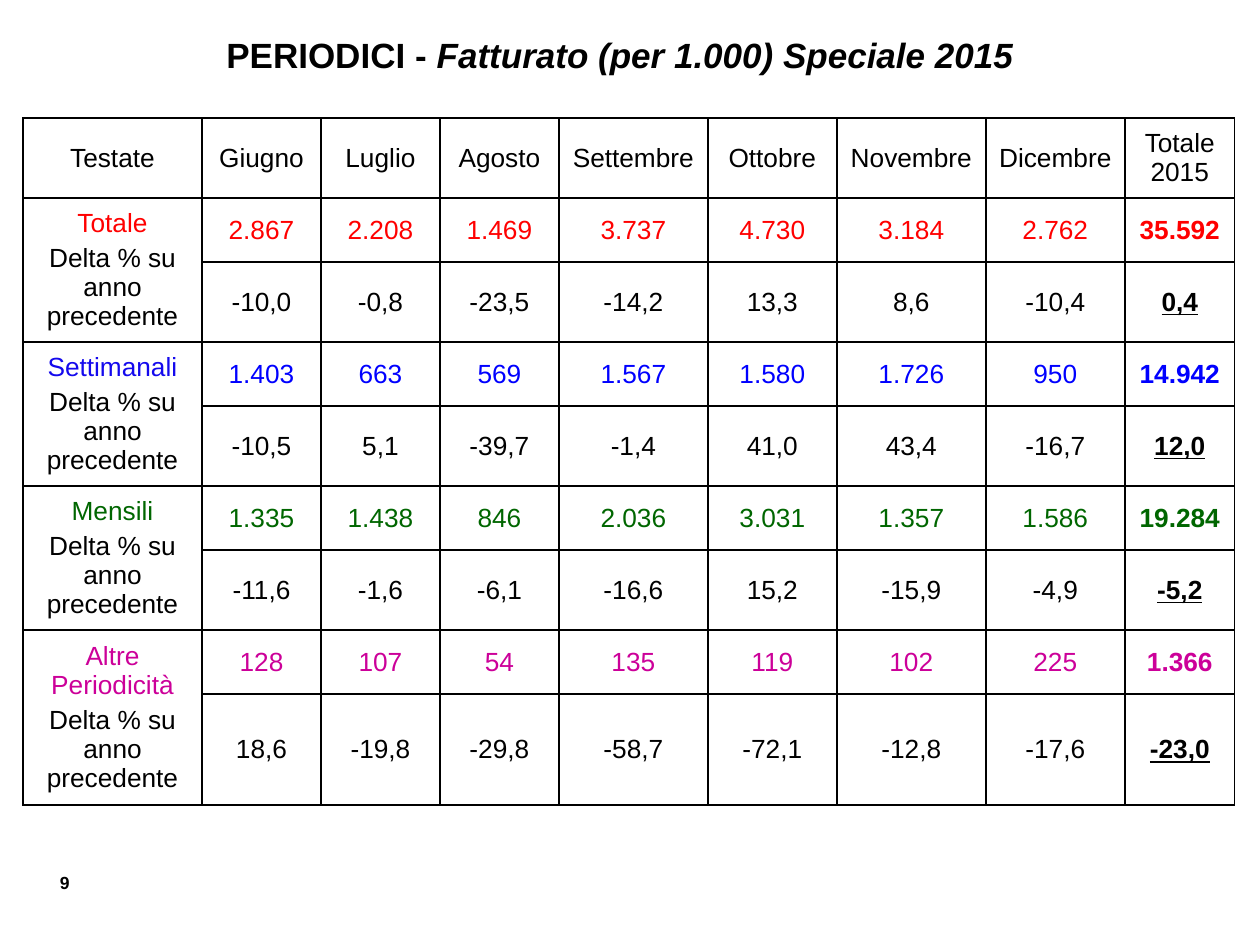
"""Build the slide with the 2015 revenue table for periodicals."""
from lxml.etree import SubElement
from pptx import Presentation
from pptx.dml.color import RGBColor
from pptx.enum.text import MSO_ANCHOR, MSO_AUTO_SIZE, PP_ALIGN
from pptx.oxml.ns import qn
from pptx.util import Emu, Pt

PX = 914400 // 126
FONT = "Arial"
BLACK = "000000"
TABLE_LEFT, TABLE_TOP = 23, 118
COL_WIDTHS = [179, 119, 119, 119, 149, 129, 149, 139, 110]
HEADER_HEIGHT, VALUE_HEIGHT = 80, 64
WIDE, TIGHT = (13, 6, 13, 6), (1, 1, 1, 0)
HEADERS = ["Testate", "Giugno", "Luglio", "Agosto", "Settembre", "Ottobre",
           "Novembre", "Dicembre", "Totale 2015"]
DELTA = "Delta % su anno precedente"
GROUPS = [
    ("Totale", "FF0000", "FF0000", 80,
     ["2.867", "2.208", "1.469", "3.737", "4.730", "3.184", "2.762", "35.592"],
     ["-10,0", "-0,8", "-23,5", "-14,2", "13,3", "8,6", "-10,4", "0,4"]),
    ("Settimanali", "1409ED", "0000FF", 80,
     ["1.403", "663", "569", "1.567", "1.580", "1.726", "950", "14.942"],
     ["-10,5", "5,1", "-39,7", "-1,4", "41,0", "43,4", "-16,7", "12,0"]),
    ("Mensili", "006600", "006600", 80,
     ["1.335", "1.438", "846", "2.036", "3.031", "1.357", "1.586", "19.284"],
     ["-11,6", "-1,6", "-6,1", "-16,6", "15,2", "-15,9", "-4,9", "-5,2"]),
    ("Altre Periodicità", "CC0099", "CC0099", 111,
     ["128", "107", "54", "135", "119", "102", "225", "1.366"],
     ["18,6", "-19,8", "-29,8", "-58,7", "-72,1", "-12,8", "-17,6", "-23,0"]),
]


def px(n):
    return Emu(n * PX)


def rgb(color):
    return RGBColor.from_string(color)


def add_run(p, text, size=15, color=BLACK, bold=False, italic=False, underline=False):
    r = p.add_run()
    r.text = text
    f = r.font
    f.name, f.size, f.color.rgb = FONT, Pt(size), rgb(color)
    f.bold, f.italic, f.underline = bold, italic, underline


def add_text(s, left, top, width, height, align):
    tf = s.shapes.add_textbox(px(left), px(top), px(width), px(height)).text_frame
    tf.word_wrap = True
    tf.auto_size = MSO_AUTO_SIZE.SHAPE_TO_FIT_TEXT
    p = tf.paragraphs[0]
    p.alignment = align
    return p


def set_borders(cell):
    tc_pr = cell._tc.get_or_add_tcPr()
    for i, side in enumerate(("a:lnL", "a:lnR", "a:lnT", "a:lnB")):
        ln = tc_pr.makeelement(qn(side), {"w": str(Pt(1))})
        tc_pr.insert(i, ln)
        fill = SubElement(ln, qn("a:solidFill"))
        SubElement(fill, qn("a:srgbClr"), val=BLACK)


def fill_cell(cell, text, margins=TIGHT, **style):
    (cell.margin_left, cell.margin_top,
     cell.margin_right, cell.margin_bottom) = map(px, margins)
    cell.vertical_anchor = MSO_ANCHOR.MIDDLE
    p = cell.text_frame.paragraphs[0]
    p.alignment = PP_ALIGN.CENTER
    add_run(p, text, **style)


def fill_group(table, row, name, name_color, value_color, values, deltas):
    label = table.cell(row, 0)
    label.merge(table.cell(row + 1, 0))
    fill_cell(label, name, WIDE, color=name_color)
    p = label.text_frame.add_paragraph()
    p.alignment = PP_ALIGN.CENTER
    p.space_before = Pt(3)
    add_run(p, DELTA)
    for col, (value, delta) in enumerate(zip(values, deltas), 1):
        total = col == len(values)
        fill_cell(table.cell(row, col), value, color=value_color, bold=total)
        fill_cell(table.cell(row + 1, col), delta, bold=total, underline=total)


def add_revenue_table(s):
    heights = [HEADER_HEIGHT]
    for group in GROUPS:
        heights += [VALUE_HEIGHT, group[3]]
    table = s.shapes.add_table(
        len(heights), len(COL_WIDTHS), px(TABLE_LEFT), px(TABLE_TOP),
        px(sum(COL_WIDTHS)), px(sum(heights))).table
    table.first_row = table.horz_banding = False
    for column, width in zip(table.columns, COL_WIDTHS):
        column.width = px(width)
    for row, height in zip(table.rows, heights):
        row.height = px(height)
    for cell in table.iter_cells():
        cell.fill.background()
        set_borders(cell)
    for col, header in enumerate(HEADERS):
        fill_cell(table.cell(0, col), header, WIDE)
    for i, (name, name_color, value_color, _, values, deltas) in enumerate(GROUPS):
        fill_group(table, 1 + 2 * i, name, name_color, value_color, values, deltas)


def main():
    prs = Presentation()
    prs.slide_width, prs.slide_height = px(1260), px(945)
    s = prs.slides.add_slide(prs.slide_layouts[6])
    page = add_text(s, 24, 866, 58, 34, PP_ALIGN.RIGHT)
    add_run(page, "9", size=10, bold=True)
    add_revenue_table(s)
    title = add_text(s, 25, 27, 1190, 55, PP_ALIGN.CENTER)
    add_run(title, "PERIODICI - ", size=20, bold=True)
    add_run(title, "Fatturato (per 1.000) Speciale 2015", size=20, bold=True, italic=True)
    prs.save("out.pptx")


if __name__ == "__main__":
    main()
